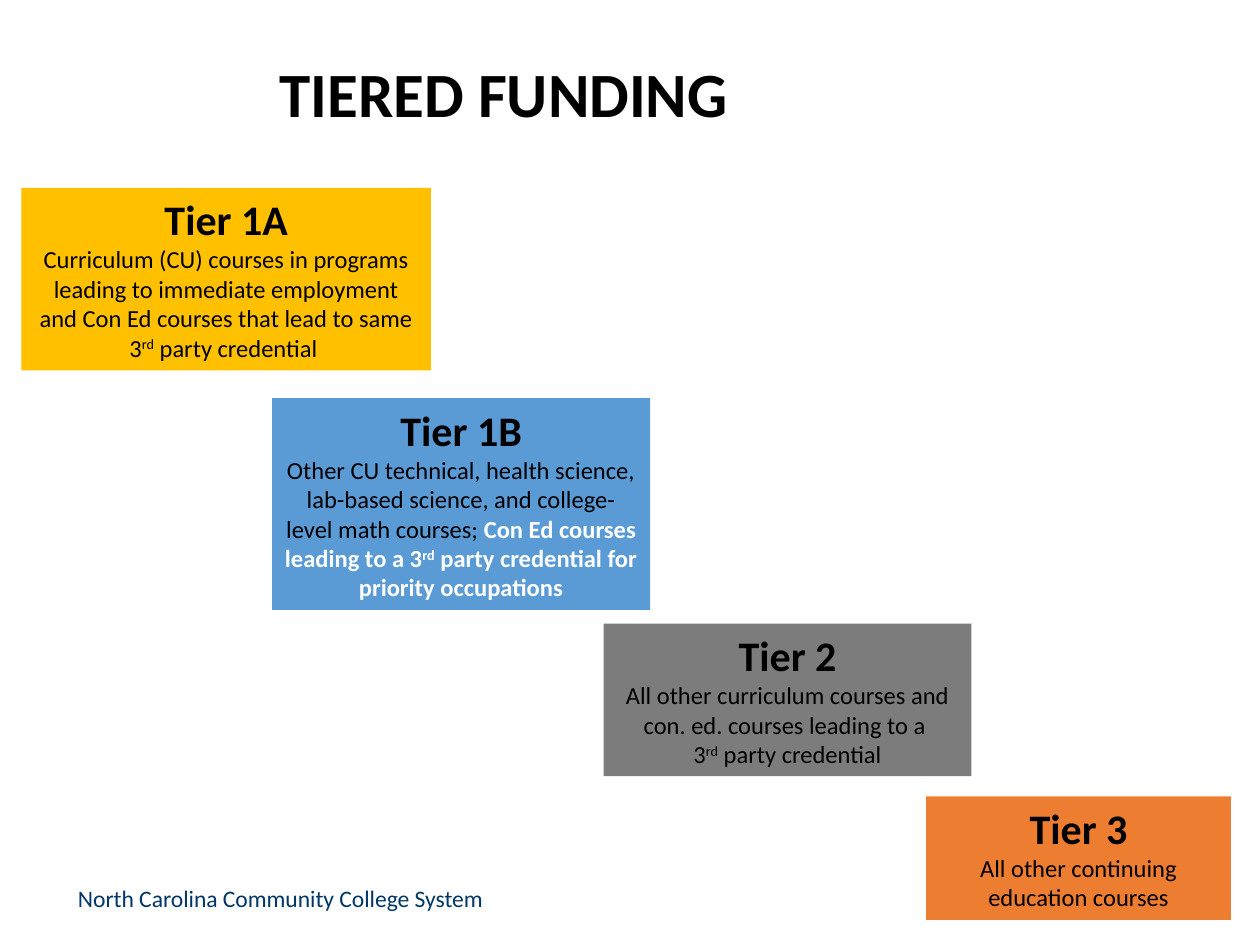
from dataclasses import dataclass

from pptx import Presentation
from pptx.dml.color import RGBColor
from pptx.enum.shapes import MSO_SHAPE
from pptx.enum.text import MSO_ANCHOR, MSO_AUTO_SIZE, PP_ALIGN
from pptx.util import Inches, Pt

RECTANGLE = MSO_SHAPE.RECTANGLE
CENTER = PP_ALIGN.CENTER
TOP, MIDDLE = MSO_ANCHOR.TOP, MSO_ANCHOR.MIDDLE
GROW = MSO_AUTO_SIZE.SHAPE_TO_FIT_TEXT


@dataclass(frozen=True)
class Theme:
    font: str = "Calibri"
    black: str = "000000"
    white: str = "FFFFFF"
    navy: str = "003767"
    gold: str = "FFC000"
    blue: str = "5B9BD5"
    gray: str = "7C7C7C"
    orange: str = "ED7D31"
    title_size: float = 36
    tier_size: float = 24
    body_size: float = 14
    footer_size: float = 13.5


THEME = Theme()

# Run styles of the tier descriptions
PLAIN = {}
SUPER = {"superscript": True}
STRONG = {"color": THEME.white, "bold": True}
STRONG_SUPER = {**STRONG, **SUPER}

# Box, fill, name, and description paragraphs made of (text, style) runs
TIERS = [
    ((0.17, 1.49, 3.25, 1.45), THEME.gold, "Tier 1A", [
        [("Curriculum (CU) courses in programs leading to immediate employment "
          "and Con Ed courses that lead to same 3", PLAIN),
         ("rd", SUPER), (" party credential ", PLAIN)],
    ]),
    ((2.16, 3.16, 3.0, 1.68), THEME.blue, "Tier 1B", [
        [("Other CU technical, health science, lab-based science, and "
          "college-level math courses; ", PLAIN),
         ("Con Ed courses leading to a 3", STRONG), ("rd", STRONG_SUPER),
         (" party credential for priority occupations", STRONG)],
    ]),
    ((4.79, 4.95, 2.92, 1.21), THEME.gray, "Tier 2", [
        [("All other curriculum courses and con. ed. courses leading to a ", PLAIN)],
        [("3", PLAIN), ("rd", SUPER), (" party credential", PLAIN)],
    ]),
    ((7.35, 6.32, 2.42, 0.98), THEME.orange, "Tier 3", [
        [("All other continuing education courses", PLAIN)],
    ]),
]


def add_run(paragraph, text, size, color=THEME.black, bold=False, superscript=False):
    run = paragraph.add_run()
    run.text = text
    run.font.name = THEME.font
    run.font.size = Pt(size)
    run.font.bold = bold
    run.font.color.rgb = RGBColor.from_string(color)
    if superscript:
        run._r.get_or_add_rPr().set("baseline", "30000")


def add_line(slide, box, text, size, color, bold=False, anchor=TOP):
    """Place a single line of text and return its paragraph."""
    frame = slide.shapes.add_textbox(*map(Inches, box)).text_frame
    frame.word_wrap = True
    frame.vertical_anchor = anchor
    paragraph = frame.paragraphs[0]
    add_run(paragraph, text, size, color, bold)
    return paragraph


def add_title(slide, box):
    title = add_line(slide, box, "TIERED FUNDING", THEME.title_size, THEME.black,
                     bold=True, anchor=MIDDLE)
    title.line_spacing = 0.9


def add_footer(slide, box):
    add_line(slide, box, "North Carolina Community College System",
             THEME.footer_size, THEME.navy)


def add_tier(slide, box, fill, name, description):
    step = slide.shapes.add_shape(RECTANGLE, *map(Inches, box))
    step.shadow.inherit = False
    step.fill.solid()
    step.fill.fore_color.rgb = RGBColor.from_string(fill)
    step.line.fill.background()

    frame = step.text_frame
    frame.word_wrap = True
    frame.auto_size = GROW
    frame.vertical_anchor = TOP
    heading = frame.paragraphs[0]
    heading.alignment = CENTER
    add_run(heading, name, THEME.tier_size, bold=True)
    for runs in description:
        paragraph = frame.add_paragraph()
        paragraph.alignment = CENTER
        for text, style in runs:
            add_run(paragraph, text, THEME.body_size, **style)


def main():
    prs = Presentation()
    prs.slide_width, prs.slide_height = Inches(10), Inches(7.5)
    slide = prs.slides.add_slide(prs.slide_layouts[6])

    add_footer(slide, (0.52, 6.97, 3.55, 0.4))
    add_title(slide, (2.12, 0.26, 6.67, 1.03))

    # Staircase of funding tiers
    for tier in TIERS:
        add_tier(slide, *tier)

    prs.save("out.pptx")


if __name__ == "__main__":
    main()
